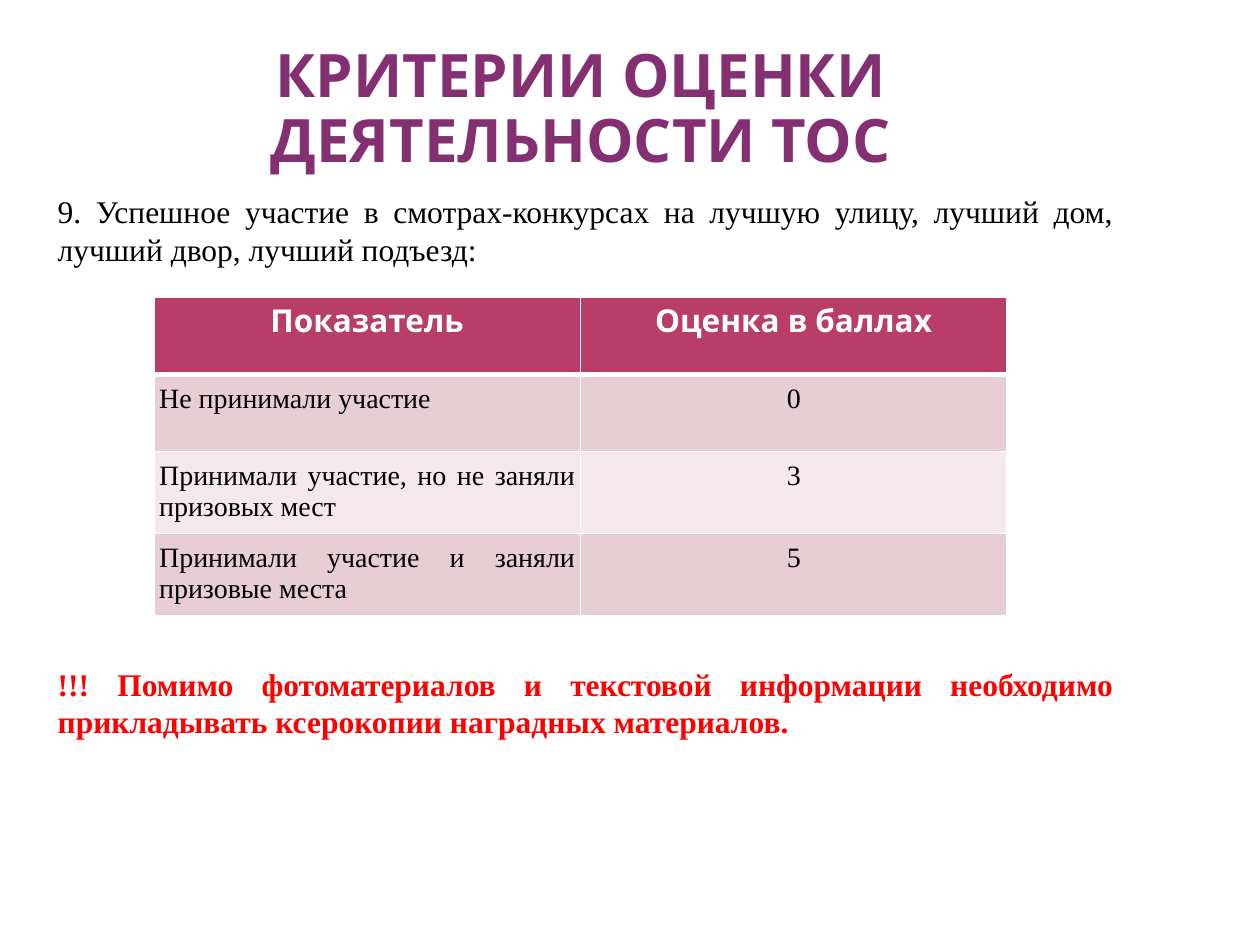
from lxml.etree import SubElement
from pptx import Presentation
from pptx.dml.color import RGBColor
from pptx.enum.text import MSO_ANCHOR, MSO_AUTO_SIZE, PP_ALIGN
from pptx.oxml.ns import qn
from pptx.util import Pt

COLORS = {
    "title": "852F73", "text": "000000", "alert": "FF0000", "white": "FFFFFF",
    "header": "B83D68", "odd": "E6CED4", "even": "F3E8EB",
}
HEADING_FONT = "Karla"
TEXT_FONT = "Times New Roman"
ROWS = [
    ("Показатель", "Оценка в баллах"),
    ("Не принимали участие", "0"),
    ("Принимали участие, но не заняли призовых мест", "3"),
    ("Принимали участие и заняли призовые места", "5"),
]
ROW_HEIGHTS = (44, 44, 47, 47)


def add_span(para, text, font, size, color, bold=False):
    """Add one formatted run to a paragraph."""
    span = para.add_run()
    span.text = text
    span.font.name = font
    span.font.size = Pt(size)
    span.font.bold = bold
    span.font.color.rgb = RGBColor.from_string(COLORS[color])


def place(shape, box):
    """Move a placeholder to a box given in points."""
    shape.left, shape.top, shape.width, shape.height = map(Pt, box)
    shape.text_frame.word_wrap = True
    shape.text_frame.auto_size = MSO_AUTO_SIZE.NONE


def fill_title(page, box):
    """Write the centred heading at the bottom of its box."""
    title = page.shapes.title
    place(title, box)
    frame = title.text_frame
    frame.vertical_anchor = MSO_ANCHOR.BOTTOM
    frame.margin_left = frame.margin_right = Pt(3.6)
    frame.margin_top = frame.margin_bottom = 0
    para = frame.paragraphs[0]
    para.alignment = PP_ALIGN.CENTER
    para.line_spacing = 0.9
    add_span(para, "КРИТЕРИИ ОЦЕНКИ ДЕЯТЕЛЬНОСТИ ТОС", HEADING_FONT, 34.2, "title", True)


def fill_body(page, box, gap):
    """Write the criterion and, after a gap for the table, the warning."""
    body = page.placeholders[1]
    place(body, box)
    frame = body.text_frame
    criterion, warning = frame.paragraphs[0], frame.add_paragraph()
    for para, space in ((criterion, 0), (warning, gap)):
        para.alignment = PP_ALIGN.JUSTIFY
        para.space_before = Pt(space)
        properties = para._p.get_or_add_pPr()
        properties.set("marL", str(Pt(5.76)))
        properties.set("indent", "0")
        SubElement(properties, qn("a:buNone"))
    add_span(criterion, "9. Успешное участие в смотрах-конкурсах на лучшую улицу, "
             "лучший дом, лучший двор, лучший подъезд:", TEXT_FONT, 18, "text")
    add_span(warning, "!!! Помимо фотоматериалов и текстовой информации необходимо "
             "прикладывать ксерокопии наградных материалов.", TEXT_FONT, 18, "alert", True)


def add_borders(cell, thick_sides):
    """Draw white borders, thicker on the named sides."""
    properties = cell._tc.get_or_add_tcPr()
    for position, side in enumerate(("lnL", "lnR", "lnT", "lnB")):
        width = 3 if side in thick_sides else 1
        line = SubElement(properties, qn(f"a:{side}"), w=str(Pt(width)))
        fill = SubElement(line, qn("a:solidFill"))
        SubElement(fill, qn("a:srgbClr"), val=COLORS["white"])
        properties.insert(position, line)


def fill_cell(cell, text, row, column):
    """Write and colour one cell of the scores table."""
    header = row == 0
    cell.fill.solid()
    shade = "header" if header else "odd" if row % 2 else "even"
    cell.fill.fore_color.rgb = RGBColor.from_string(COLORS[shade])
    add_borders(cell, {0: ("lnB",), 1: ("lnT",)}.get(row, ()))
    para = cell.text_frame.paragraphs[0]
    para.alignment = PP_ALIGN.CENTER if header or column else PP_ALIGN.JUSTIFY
    if header:
        add_span(para, text, HEADING_FONT, 18, "white", True)
    else:
        cell.margin_left = cell.margin_right = Pt(3)
        cell.margin_top = cell.margin_bottom = Pt(5)
        add_span(para, text, TEXT_FONT, 16, "text")


def add_scores(page, box):
    """Add the table of indicators and scores."""
    table = page.shapes.add_table(len(ROWS), len(ROWS[0]), *map(Pt, box)).table
    for row, (height, texts) in enumerate(zip(ROW_HEIGHTS, ROWS)):
        table.rows[row].height = Pt(height)
        for column, text in enumerate(texts):
            fill_cell(table.cell(row, column), text, row, column)


def main():
    """Build and save the deck."""
    deck = Presentation()
    deck.slide_width, deck.slide_height = Pt(720), Pt(540)
    page = deck.slides.add_slide(deck.slide_layouts[1])
    fill_title(page, (20, 15, 623.5, 85))
    fill_body(page, (20, 106, 623.5, 376.5), 227)
    add_scores(page, (88, 170, 487.5, sum(ROW_HEIGHTS)))
    deck.save("out.pptx")


if __name__ == "__main__":
    main()
